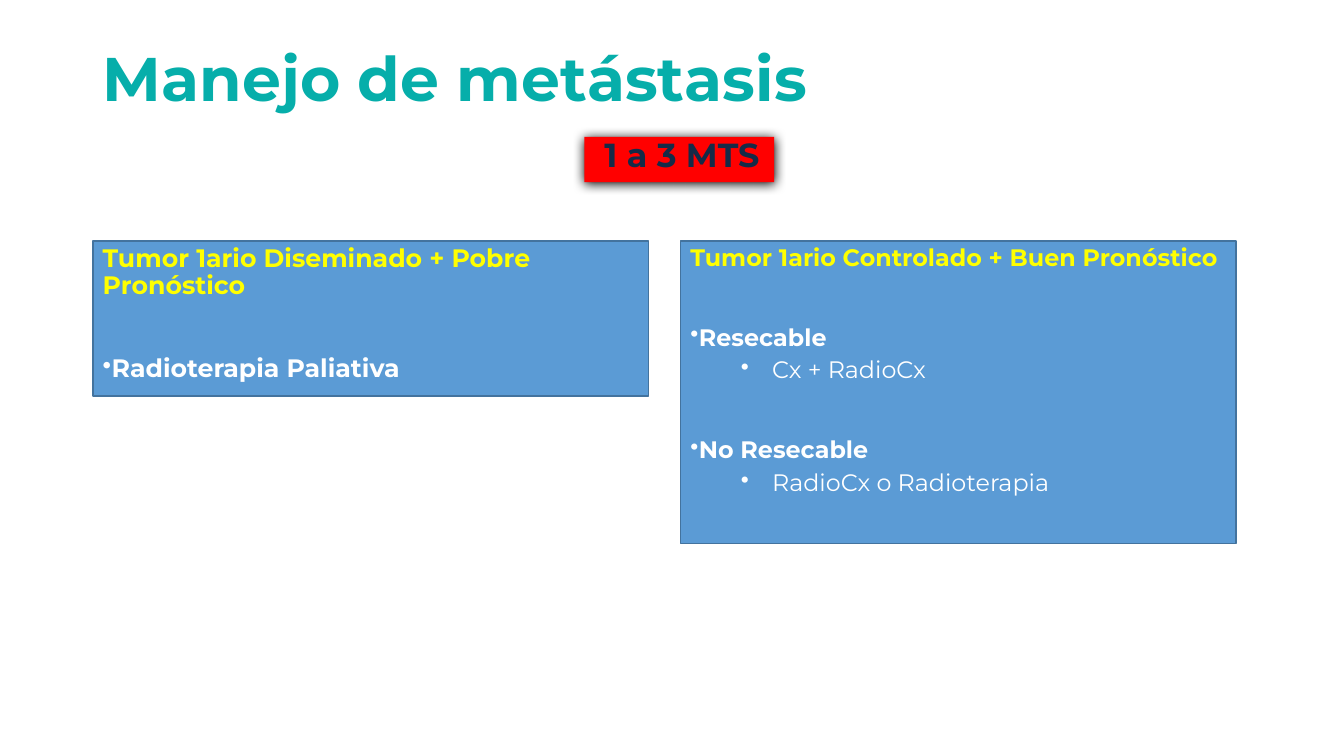
import dataclasses

import lxml.etree
import pptx
import pptx.dml.color
import pptx.enum.shapes
import pptx.enum.text
import pptx.oxml.ns
import pptx.util

Cm = pptx.util.Cm
Pt = pptx.util.Pt
ALIGN = pptx.enum.text.PP_ALIGN
ANCHOR = pptx.enum.text.MSO_ANCHOR


@dataclasses.dataclass(frozen=True)
class Theme:
    font: str = "Montserrat"
    teal: str = "06AEAA"
    blue: str = "5B9BD5"
    blue_edge: str = "43739E"
    yellow: str = "FFFF00"
    white: str = "FFFFFF"
    red: str = "FF0000"
    navy: str = "152B48"
    black: str = "000000"
    title_size: float = 44
    badge_size: float = 23.8
    left_size: float = 18
    right_size: float = 17


def color(value):
    return pptx.dml.color.RGBColor.from_string(value)


class SlideBuilder:
    def __init__(self, slide, theme):
        self.slide = slide
        self.theme = theme

    def set_text(self, paragraph, text, size, ink, bold=True, spacing=0.9):
        paragraph.text = text
        paragraph.line_spacing = spacing
        font = paragraph.font
        font.name = self.theme.font
        font.size = Pt(size)
        font.bold = bold
        font.color.rgb = color(ink)

    def bullet(self, paragraph, margin, indent):
        properties = paragraph._p.get_or_add_pPr()
        properties.set("marL", str(Cm(margin)))
        properties.set("indent", str(Cm(indent)))
        mark = lxml.etree.SubElement(properties, pptx.oxml.ns.qn("a:buChar"))
        mark.set("char", "•")

    def title(self, text, left, top, width, height):
        box = self.slide.shapes.add_textbox(Cm(left), Cm(top), Cm(width), Cm(height))
        frame = box.text_frame
        frame.word_wrap = True
        frame.vertical_anchor = ANCHOR.MIDDLE
        self.set_text(frame.paragraphs[0], text, self.theme.title_size, self.theme.teal)

    def rectangle(self, left, top, width, height, fill):
        shape = self.slide.shapes.add_shape(
            pptx.enum.shapes.MSO_SHAPE.RECTANGLE, Cm(left), Cm(top), Cm(width), Cm(height)
        )
        shape.shadow.inherit = False
        shape.fill.solid()
        shape.fill.fore_color.rgb = color(fill)
        shape.text_frame.word_wrap = True
        shape.text_frame.vertical_anchor = ANCHOR.TOP
        return shape

    def badge(self, text, left, top, width, height):
        shape = self.rectangle(left, top, width, height, self.theme.red)
        shape.line.fill.background()
        effects = shape._element.spPr.find(pptx.oxml.ns.qn("a:effectLst"))
        shadow = lxml.etree.SubElement(
            effects, pptx.oxml.ns.qn("a:outerShdw"),
            blurRad=str(Pt(8.5)), dist=str(Pt(1)), dir="5400000", rotWithShape="0",
        )
        lxml.etree.SubElement(shadow, pptx.oxml.ns.qn("a:srgbClr"), val=self.theme.black)
        paragraph = shape.text_frame.paragraphs[0]
        paragraph._p.get_or_add_pPr().set("marL", str(Cm(0.13)))
        paragraph.alignment = ALIGN.CENTER
        self.set_text(paragraph, text, self.theme.badge_size, self.theme.navy, spacing=0.8)

    def panel(self, heading, options, left, top, width, height, size):
        shape = self.rectangle(left, top, width, height, self.theme.blue)
        shape.line.color.rgb = color(self.theme.blue_edge)
        shape.line.width = Pt(1)
        frame = shape.text_frame
        paragraph = frame.paragraphs[0]
        paragraph.alignment = ALIGN.LEFT
        self.set_text(paragraph, heading, size, self.theme.yellow)
        for option, treatments in options:
            paragraph = frame.add_paragraph()
            self.bullet(paragraph, 0, -0.64)
            paragraph.alignment = ALIGN.LEFT
            paragraph.space_before = Pt(round(20 + size * 1.1, 1))
            self.set_text(paragraph, option, size, self.theme.white)
            for treatment in treatments:
                paragraph = frame.add_paragraph()
                paragraph.level = 1
                self.bullet(paragraph, 2.06, -0.79)
                paragraph.alignment = ALIGN.LEFT
                paragraph.space_before = Pt(5)
                self.set_text(paragraph, treatment, size, self.theme.white, bold=False)


def main():
    presentation = pptx.Presentation()
    presentation.slide_width = Cm(33.87)
    presentation.slide_height = Cm(19.05)
    slide = presentation.slides.add_slide(presentation.slide_layouts[6])
    theme = Theme()
    builder = SlideBuilder(slide, theme)

    builder.title("Manejo de metástasis", 2.34, 1.02, 29.21, 2.08)
    builder.panel(
        "Tumor 1ario Diseminado + Pobre Pronóstico",
        [("Radioterapia Paliativa", [])],
        2.34, 6.07, 14, 3.91, theme.left_size,
    )
    builder.panel(
        "Tumor 1ario Controlado + Buen Pronóstico",
        [("Resecable", ["Cx + RadioCx"]), ("No Resecable", ["RadioCx o Radioterapia"])],
        17.15, 6.07, 14, 7.62, theme.right_size,
    )
    builder.badge("1 a 3 MTS", 14.73, 3.45, 4.78, 1.14)
    presentation.save("out.pptx")


if __name__ == "__main__":
    main()
